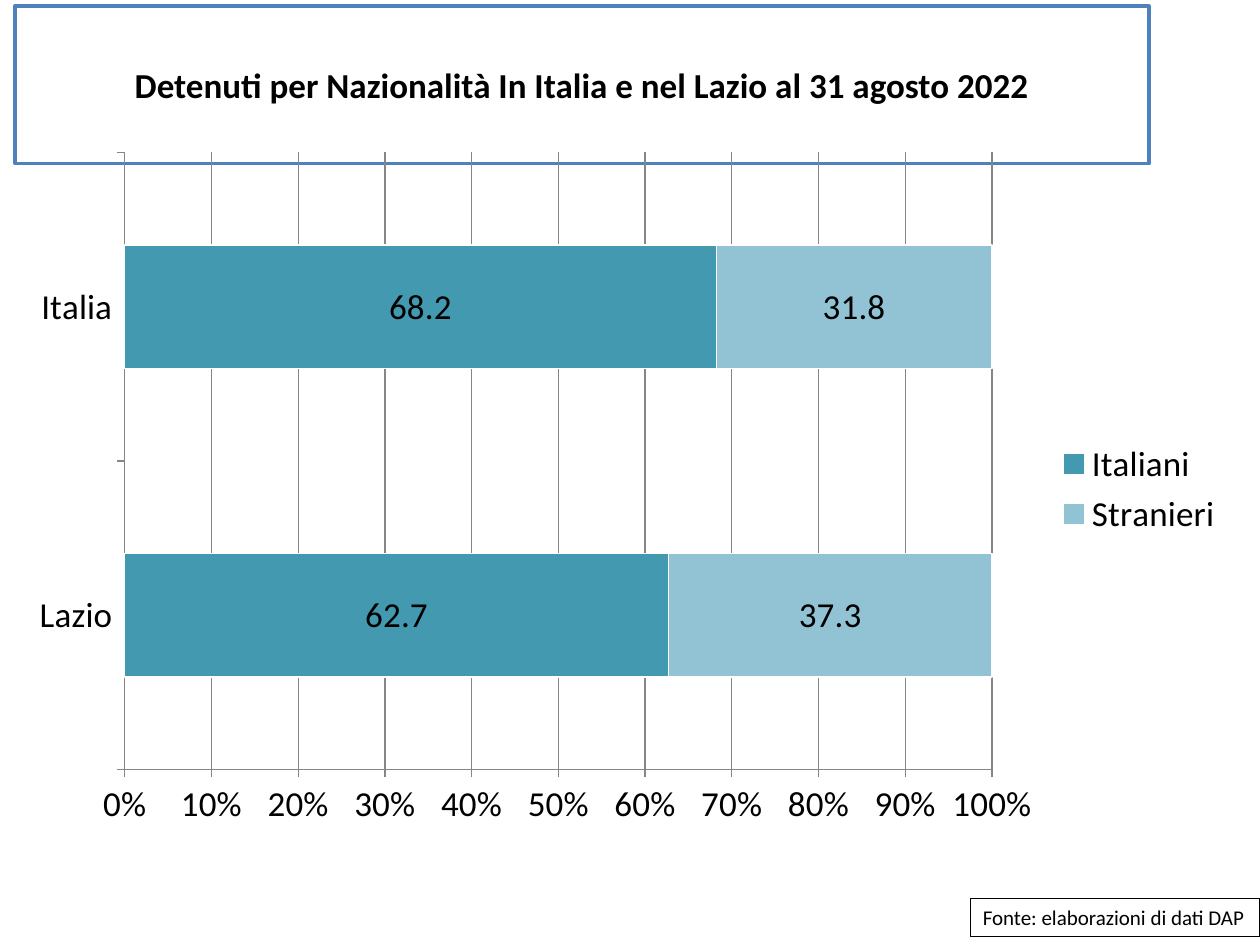
import lxml.etree
import pptx
import pptx.chart.data
import pptx.dml.color
import pptx.enum.chart
import pptx.enum.text
import pptx.oxml.ns
import pptx.util

Pt = pptx.util.Pt


def color(hex_code):
    return pptx.dml.color.RGBColor.from_string(hex_code)


class SlideBuilder:
    font_name = "Calibri"
    text_color = "000000"
    grid_color = "868686"

    def __init__(self, slide):
        self.slide = slide

    def style_font(self, font, size, bold=False):
        font.name = self.font_name
        font.size = Pt(size)
        font.bold = bold
        font.color.rgb = color(self.text_color)

    def place(self, shape, left, top, width, height):
        shape.left, shape.top = Pt(left), Pt(top)
        shape.width, shape.height = Pt(width), Pt(height)

    def outline(self, shape, line_color, line_width):
        shape.fill.solid()
        shape.fill.fore_color.rgb = color("FFFFFF")
        shape.line.color.rgb = color(line_color)
        shape.line.width = Pt(line_width)

    def title(self, text, box):
        heading = self.slide.shapes.title
        self.place(heading, *box)
        self.outline(heading, "4F81BD", 2)
        frame = heading.text_frame
        frame.text = text
        frame.vertical_anchor = pptx.enum.text.MSO_ANCHOR.MIDDLE
        frame.paragraphs[0].alignment = pptx.enum.text.PP_ALIGN.CENTER
        self.style_font(frame.paragraphs[0].runs[0].font, 20, True)

    def note(self, text, box):
        source = self.slide.shapes.add_textbox(*map(Pt, box))
        self.outline(source, "000000", 0.75)
        frame = source.text_frame
        frame.text = text
        frame.word_wrap = False
        frame.auto_size = pptx.enum.text.MSO_AUTO_SIZE.SHAPE_TO_FIT_TEXT
        self.style_font(frame.paragraphs[0].runs[0].font, 12)

    def stacked_bars(self, categories, shares, box, plot_area):
        chart_data = pptx.chart.data.CategoryChartData()
        chart_data.categories = categories
        for name, values, _ in shares:
            chart_data.add_series(name, values)
        chart = self.slide.shapes.add_chart(
            pptx.enum.chart.XL_CHART_TYPE.BAR_STACKED_100, *map(Pt, box), chart_data
        ).chart
        self.style_font(chart.font, 20)
        chart.has_title = False
        chart.has_legend = True
        chart.legend.position = pptx.enum.chart.XL_LEGEND_POSITION.RIGHT
        chart.legend.include_in_layout = False
        plot = chart.plots[0]
        plot.gap_width = 150
        plot.overlap = 100
        plot.vary_by_categories = False
        for series, (_, _, fill) in zip(plot.series, shares):
            series.format.fill.solid()
            series.format.fill.fore_color.rgb = color(fill)
            series.format.line.color.rgb = color("FFFFFF")
            series.format.line.width = Pt(0.75)
            labels = series.data_labels
            labels.show_value = True
            labels.number_format = "0.0"
            labels.number_format_is_linked = False
            labels.position = pptx.enum.chart.XL_LABEL_POSITION.CENTER
            self.style_font(labels.font, 20)
        for axis in (chart.category_axis, chart.value_axis):
            axis.major_tick_mark = pptx.enum.chart.XL_TICK_MARK.OUTSIDE
            axis.minor_tick_mark = pptx.enum.chart.XL_TICK_MARK.NONE
            axis.format.line.color.rgb = color(self.grid_color)
            axis.format.line.width = Pt(0.75)
        percent = chart.value_axis
        percent.minimum_scale, percent.maximum_scale = 0, 1
        percent.major_unit = 0.1
        percent.tick_labels.number_format = "0%"
        percent.tick_labels.number_format_is_linked = False
        percent.has_major_gridlines = True
        percent.major_gridlines.format.line.color.rgb = color(self.grid_color)
        percent.major_gridlines.format.line.width = Pt(0.75)
        self.fix_plot_area(chart, plot_area)

    def fix_plot_area(self, chart, plot_area):
        qn = pptx.oxml.ns.qn
        area = chart.element.find(".//" + qn("c:plotArea"))
        for old in area.findall(qn("c:layout")):
            area.remove(old)
        layout = lxml.etree.Element(qn("c:layout"))
        area.insert(0, layout)
        manual = lxml.etree.SubElement(layout, qn("c:manualLayout"))
        settings = [("layoutTarget", "inner"), ("xMode", "edge"), ("yMode", "edge")]
        settings += zip("xywh", plot_area)
        for tag, value in settings:
            lxml.etree.SubElement(manual, qn("c:" + tag)).set("val", str(value))


def main():
    deck = pptx.Presentation()
    deck.slide_width, deck.slide_height = Pt(720), Pt(540)
    builder = SlideBuilder(deck.slides.add_slide(deck.slide_layouts[5]))
    builder.title(
        "Detenuti per Nazionalità In Italia e nel Lazio al 31 agosto 2022",
        (8.5, 3.5, 648, 90),
    )
    builder.note("Fonte: elaborazioni di dati DAP", (554.5, 513.5, 165.5, 21.8))
    builder.stacked_bars(
        ["Lazio", "Italia"],
        [
            ("Italiani", (62.7, 68.2), "4299B0"),
            ("Stranieri", (37.3, 31.8), "92C3D5"),
        ],
        (8.5, 79, 698, 401),
        (0.09, 0.02, 0.71, 0.88),
    )
    deck.save("out.pptx")


if __name__ == "__main__":
    main()
